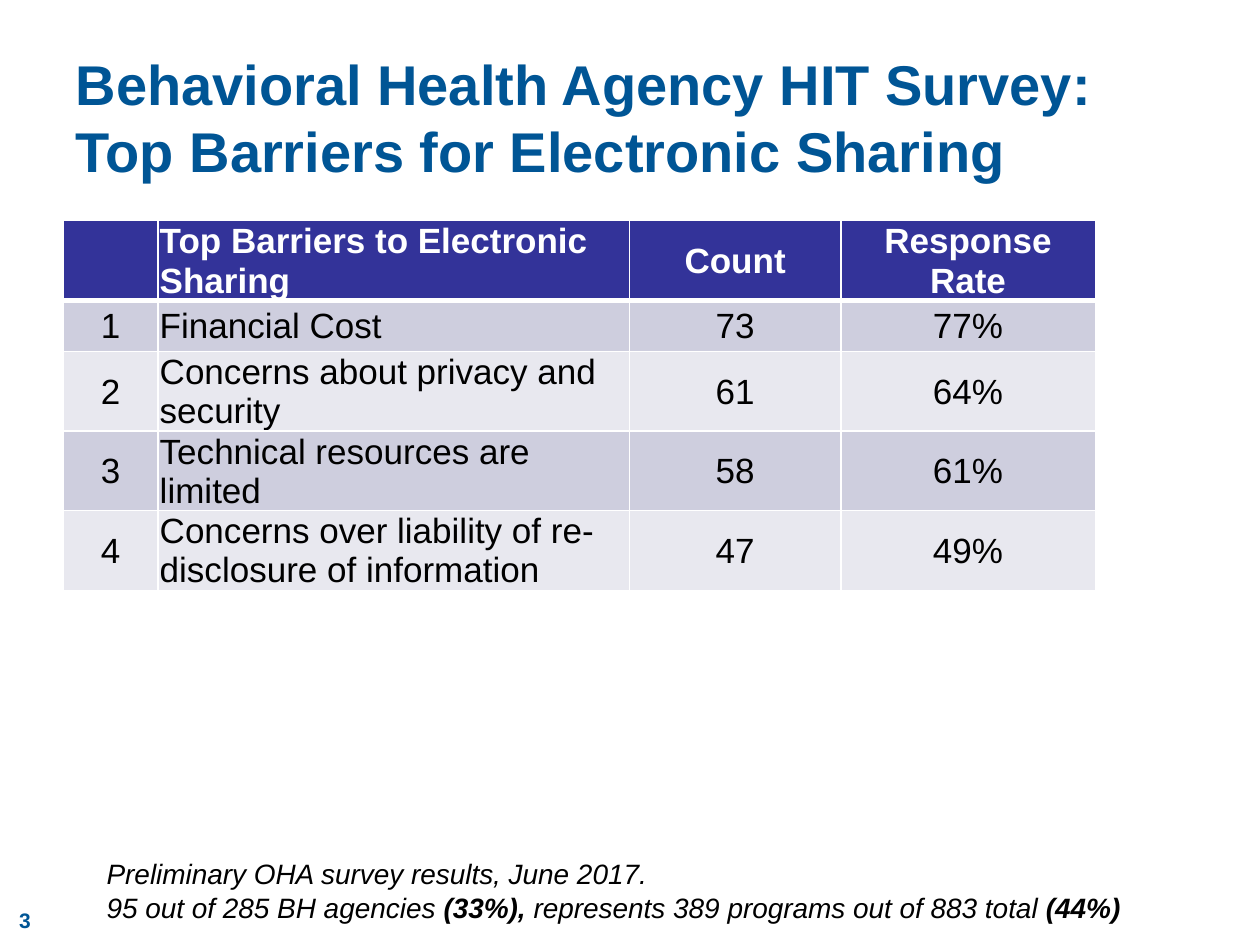
import pptx
import pptx.dml.color
import pptx.enum.text
import pptx.oxml.ns
import pptx.util
from lxml import etree

Cm = pptx.util.Cm
Pt = pptx.util.Pt
Align = pptx.enum.text.PP_ALIGN
Anchor = pptx.enum.text.MSO_ANCHOR

COLORS = {
    "blue": "005595",
    "header": "333399",
    "odd": "CECEDE",
    "even": "E8E8EF",
    "white": "FFFFFF",
    "black": "000000",
}
COLUMN_WIDTHS = [1.92, 9.5, 4.26, 5.13]
ROW_HEIGHTS = [1.6, 1.03, 1.6, 1.6, 1.6]
ROWS = [
    ["", "Top Barriers to Electronic Sharing", "Count", "Response Rate"],
    ["1", "Financial Cost", "73", "77%"],
    ["2", "Concerns about privacy and security", "61", "64%"],
    ["3", "Technical resources are limited", "58", "61%"],
    ["4", "Concerns over liability of re-disclosure of information", "47", "49%"],
]
NOTES = [
    [("Preliminary OHA survey results, June 2017.", False)],
    [
        ("95 out of 285 BH agencies ", False),
        ("(33%), ", True),
        ("represents 389 programs out of 883 total ", False),
        ("(44%)", True),
    ],
]


def color(name):
    return pptx.dml.color.RGBColor.from_string(COLORS[name])


def add_run(paragraph, text, size, color_name, bold=False, italic=False):
    run = paragraph.add_run()
    run.text = text
    run.font.name = "Arial"
    run.font.size = Pt(size)
    run.font.bold = bold
    run.font.italic = italic
    run.font.color.rgb = color(color_name)


def place_title(slide, left, top, width, height):
    title = slide.shapes.title
    title.left, title.top, title.width, title.height = left, top, width, height
    frame = title.text_frame
    frame.auto_size = pptx.enum.text.MSO_AUTO_SIZE.NONE
    frame.vertical_anchor = Anchor.MIDDLE
    paragraph = frame.paragraphs[0]
    paragraph.alignment = Align.LEFT
    text = "Behavioral Health Agency HIT Survey: Top Barriers for Electronic Sharing"
    add_run(paragraph, text, 32, "blue", bold=True)


def add_borders(cell, bottom_width):
    properties = cell._tc.get_or_add_tcPr()
    for side, width in (("L", 1), ("R", 1), ("T", 1), ("B", bottom_width)):
        line = etree.SubElement(properties, pptx.oxml.ns.qn(f"a:ln{side}"), w=str(Pt(width)))
        fill = etree.SubElement(line, pptx.oxml.ns.qn("a:solidFill"))
        etree.SubElement(fill, pptx.oxml.ns.qn("a:srgbClr"), val=COLORS["white"])


def format_cell(cell, text, row_index, column_index):
    is_header = row_index == 0
    add_borders(cell, 3 if is_header else 1)
    fill_name = "header" if is_header else "odd" if row_index % 2 else "even"
    cell.fill.solid()
    cell.fill.fore_color.rgb = color(fill_name)
    cell.vertical_anchor = Anchor.MIDDLE
    cell.margin_left = cell.margin_right = cell.margin_top = Cm(0.03)
    cell.margin_bottom = 0
    paragraph = cell.text_frame.paragraphs[0]
    paragraph.alignment = Align.LEFT if column_index == 1 else Align.CENTER
    if text:
        add_run(paragraph, text, 20, "white" if is_header else "black", bold=is_header)


def add_barrier_table(slide, left, top):
    width, height = Cm(sum(COLUMN_WIDTHS)), Cm(sum(ROW_HEIGHTS))
    shape = slide.shapes.add_table(
        len(ROWS), len(COLUMN_WIDTHS), left, top, width, height
    )
    table = shape.table
    for column, column_width in zip(table.columns, COLUMN_WIDTHS):
        column.width = Cm(column_width)
    for row_index, texts in enumerate(ROWS):
        table.rows[row_index].height = Cm(ROW_HEIGHTS[row_index])
        for column_index, text in enumerate(texts):
            format_cell(table.cell(row_index, column_index), text, row_index, column_index)


def add_slide_number(slide, left, top, width, height):
    frame = slide.shapes.add_textbox(left, top, width, height).text_frame
    frame.word_wrap = True
    frame.vertical_anchor = Anchor.MIDDLE
    paragraph = frame.paragraphs[0]
    paragraph.alignment = Align.CENTER
    add_run(paragraph, "3", 12, "blue", bold=True)


def add_survey_notes(slide, left, top, width, height):
    frame = slide.shapes.add_textbox(left, top, width, height).text_frame
    frame.word_wrap = True
    for index, runs in enumerate(NOTES):
        paragraph = frame.add_paragraph() if index else frame.paragraphs[0]
        for text, bold in runs:
            add_run(paragraph, text, 16, "black", bold=bold, italic=True)


def main():
    presentation = pptx.Presentation()
    presentation.slide_width = Cm(25.4)
    presentation.slide_height = Cm(19.05)
    slide = presentation.slides.add_slide(presentation.slide_layouts[5])
    place_title(slide, Cm(1.27), Cm(0.76), Cm(22.86), Cm(3.18))
    add_barrier_table(slide, Cm(1.27), Cm(4.45))
    add_slide_number(slide, Cm(-0.03), Cm(18.03), Cm(1.07), Cm(1.04))
    add_survey_notes(slide, Cm(1.9), Cm(17.15), Cm(22.66), Cm(1.63))
    presentation.save("out.pptx")


if __name__ == "__main__":
    main()
